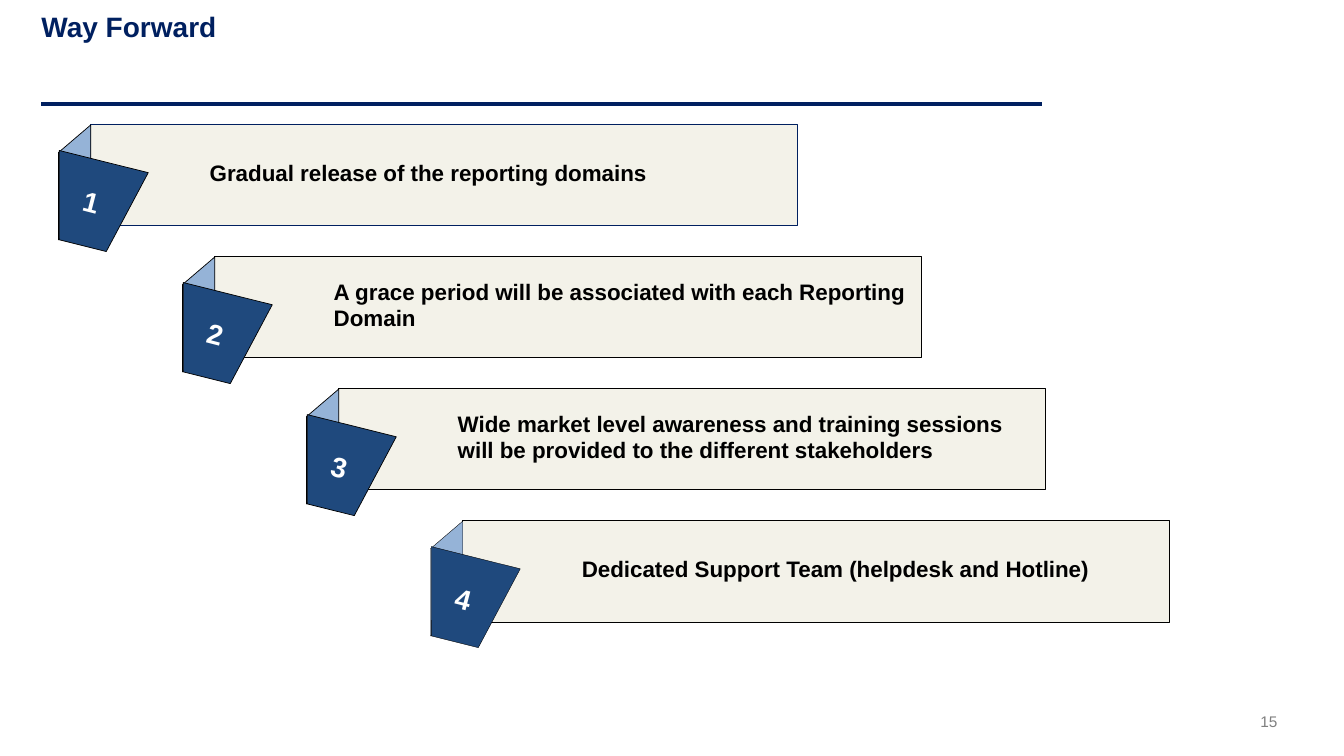
"""Build the Way Forward slide with four cascading numbered steps."""
from dataclasses import dataclass

import pptx
import pptx.dml.color
import pptx.enum.shapes
import pptx.enum.text
import pptx.oxml
import pptx.oxml.ns
import pptx.shapes.autoshape
import pptx.shapes.group
import pptx.slide
import pptx.text.text
import pptx.util

Inches = pptx.util.Inches
Pt = pptx.util.Pt
Shape = pptx.enum.shapes.MSO_SHAPE
Align = pptx.enum.text.PP_ALIGN
Anchor = pptx.enum.text.MSO_ANCHOR
AutoSize = pptx.enum.text.MSO_AUTO_SIZE


@dataclass(frozen=True)
class Theme:
    font: str = "Arial"
    navy: str = "002060"
    ribbon: str = "1F497D"
    fold: str = "95B3D7"
    panel: str = "F3F2E9"
    black: str = "000000"
    white: str = "FFFFFF"
    gray: str = "808080"
    heading_size: float = 20
    body_size: float = 16
    page_size: float = 11
    outline: float = 0.5
    thin_outline: float = 0.25


THEME = Theme()


@dataclass(frozen=True)
class Box:
    left: float
    top: float
    width: float
    height: float

    def lengths(self) -> tuple[int, ...]:
        return tuple(Inches(n) for n in (self.left, self.top, self.width, self.height))

    def moved(self, across: float, down: float) -> "Box":
        return Box(self.left + across, self.top + down, self.width, self.height)


@dataclass(frozen=True)
class Step:
    text: str
    bar_line: str = THEME.black
    ribbon_outline: float = THEME.outline


STEPS = (
    Step("Gradual release of the reporting domains", bar_line=THEME.navy),
    Step("A grace period will be associated with each Reporting Domain"),
    Step("Wide market level awareness and training sessions will be provided "
         "to the different stakeholders"),
    Step("Dedicated Support Team (helpdesk and Hotline)", ribbon_outline=THEME.thin_outline),
)
STEP_ACROSS, STEP_DOWN = 1.23, 1.31
BAR = Box(0.9, 1.23, 7.01, 1.01)
FOLD = Box(0.17, 1.65, 1.14, 0.32)
RIBBON = Box(0.47, 1.59, 0.91, 0.86)
NUMBER = Box(0.73, 1.79, 0.36, 0.44)
TITLE = Box(0.41, 0.11, 9.92, 0.88)
PAGE_NUMBER = Box(11.62, 7.06, 1.05, 0.22)
RULE_TOP = 1.03


def color(value: str) -> pptx.dml.color.RGBColor:
    """Turn a hex string into a colour."""
    return pptx.dml.color.RGBColor.from_string(value)


def set_margins(frame: pptx.text.text.TextFrame, left: float, top: float,
                right: float, bottom: float) -> None:
    """Set the insets of a text frame in inches."""
    frame.margin_left, frame.margin_top = Inches(left), Inches(top)
    frame.margin_right, frame.margin_bottom = Inches(right), Inches(bottom)


def write(frame: pptx.text.text.TextFrame, text: str, size: float, ink: str,
          bold: bool = True, align: Align = Align.LEFT) -> pptx.text.text._Paragraph:
    """Fill a frame with one formatted paragraph."""
    frame.text = text
    para = frame.paragraphs[0]
    para.alignment = align
    para.font.name = THEME.font
    para.font.size = Pt(size)
    para.font.bold = bold
    para.font.color.rgb = color(ink)
    return para


def add_panel(group: pptx.shapes.group.GroupShape, kind: Shape, box: Box, fill: str,
              line: str, width: float, rotation: float = 0) -> pptx.shapes.autoshape.Shape:
    """Add a filled and outlined preset shape."""
    panel = group.shapes.add_shape(kind, *box.lengths())
    panel.shadow.inherit = False
    panel.fill.solid()
    panel.fill.fore_color.rgb = color(fill)
    panel.line.color.rgb = color(line)
    panel.line.width = Pt(width)
    panel.rotation = rotation
    return panel


def add_step(page: pptx.slide.Slide, index: int, step: Step) -> None:
    """Draw one numbered ribbon with its text bar."""
    group = page.shapes.add_group_shape()
    bar_box, fold_box, ribbon_box, number_box = (
        box.moved(index * STEP_ACROSS, index * STEP_DOWN)
        for box in (BAR, FOLD, RIBBON, NUMBER))

    bar = add_panel(group, Shape.RECTANGLE, bar_box, THEME.panel, step.bar_line, THEME.outline)
    frame = bar.text_frame
    frame.word_wrap = True
    frame.vertical_anchor = Anchor.MIDDLE
    set_margins(frame, 1.18, 0.08, 0.08, 0.1)
    para = write(frame, step.text, THEME.body_size, THEME.black)
    para.line_spacing = 0.95
    para.space_after = Pt(8)

    fold = add_panel(group, Shape.PARALLELOGRAM, fold_box, THEME.fold, THEME.black,
                     step.ribbon_outline, 90)
    fold.adjustments[0] = 0.856
    fold.element.spPr.get_or_add_xfrm().set("flipV", "1")
    add_panel(group, Shape.TRAPEZOID, ribbon_box, THEME.ribbon, THEME.black,
              step.ribbon_outline, 194)

    number = group.shapes.add_textbox(*number_box.lengths())
    number.rotation = 14.5
    number.text_frame.word_wrap = False
    number.text_frame.auto_size = AutoSize.SHAPE_TO_FIT_TEXT
    write(number.text_frame, str(index + 1), THEME.heading_size, THEME.white)


def add_title(page: pptx.slide.Slide) -> None:
    """Place the title and the rule below it."""
    title = page.shapes.title
    title.left, title.top, title.width, title.height = TITLE.lengths()
    frame = title.text_frame
    frame.word_wrap = True
    frame.auto_size = AutoSize.NONE
    frame.vertical_anchor = Anchor.TOP
    set_margins(frame, 0, 0.04, 0, 0)
    write(frame, "Way Forward", THEME.heading_size, THEME.navy).line_spacing = 0.85

    rule = page.shapes.add_connector(
        pptx.enum.shapes.MSO_CONNECTOR.STRAIGHT, Inches(TITLE.left), Inches(RULE_TOP),
        Inches(TITLE.left + TITLE.width), Inches(RULE_TOP))
    rule.line.color.rgb = color(THEME.navy)
    rule.line.width = Pt(3)
    rule.element.spPr.append(pptx.oxml.parse_xml(
        f"<a:effectLst {pptx.oxml.ns.nsdecls('a')}/>"))


def add_page_number(page: pptx.slide.Slide) -> None:
    """Place the page number at the lower right."""
    frame = page.shapes.add_textbox(*PAGE_NUMBER.lengths()).text_frame
    frame.word_wrap = True
    set_margins(frame, 0, 0, 0, 0)
    write(frame, "15", THEME.page_size, THEME.gray, bold=False, align=Align.RIGHT)


def main() -> None:
    """Build and save the deck."""
    deck = pptx.Presentation()
    deck.slide_width, deck.slide_height = Inches(13.33), Inches(7.5)
    page = deck.slides.add_slide(deck.slide_layouts.get_by_name("Title Only"))
    add_title(page)
    for index, step in enumerate(STEPS):
        add_step(page, index, step)
    add_page_number(page)
    deck.save("out.pptx")


if __name__ == "__main__":
    main()
